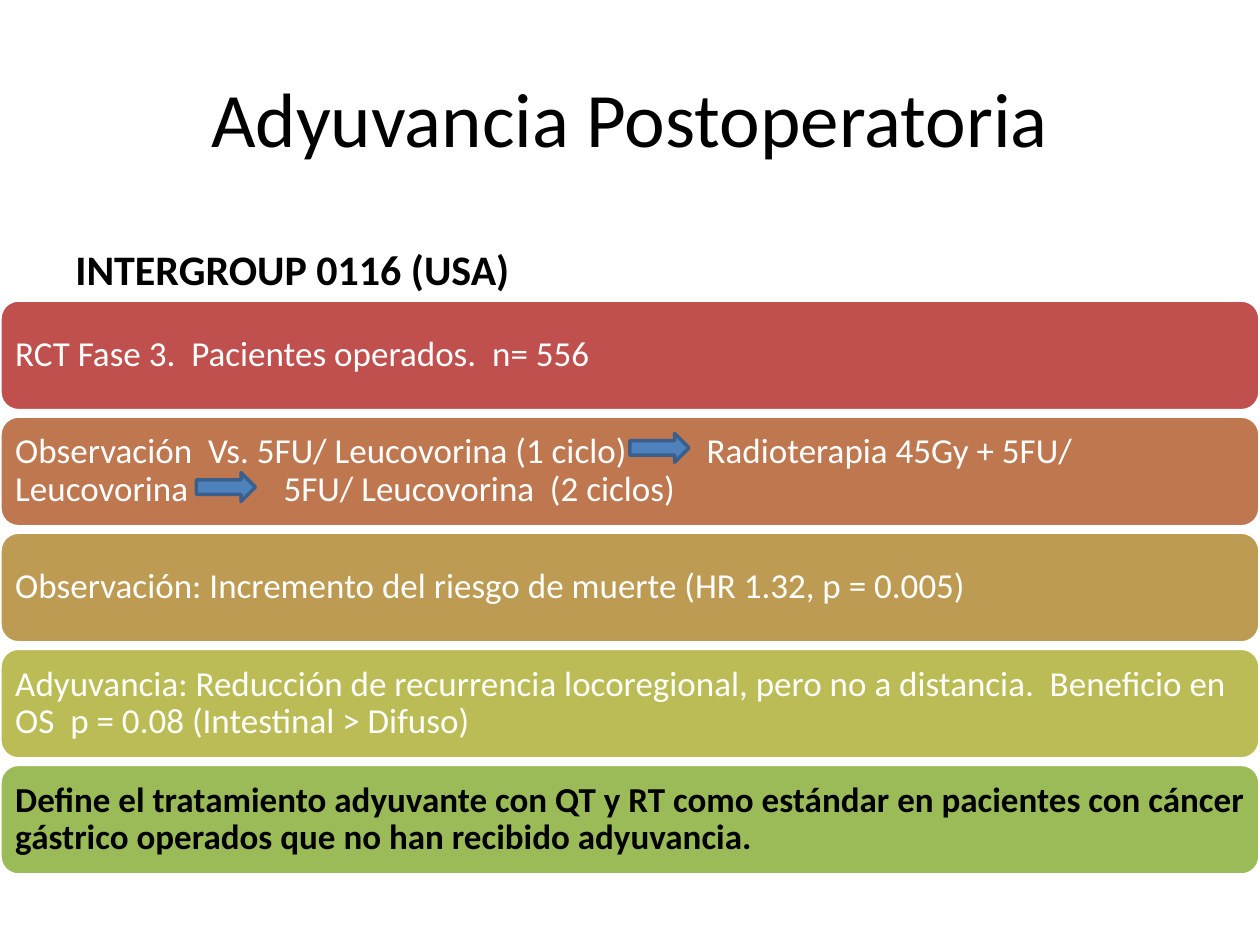
import dataclasses

import lxml.etree
import pptx
import pptx.dml.color
import pptx.enum.shapes
import pptx.enum.text
import pptx.oxml.ns
import pptx.util

Cm = pptx.util.Cm
Pt = pptx.util.Pt
Anchor = pptx.enum.text.MSO_ANCHOR
Align = pptx.enum.text.PP_ALIGN
ShapeType = pptx.enum.shapes.MSO_SHAPE


@dataclasses.dataclass(frozen=True)
class Theme:
    font: str = "Calibri"
    dark: str = "000000"
    light: str = "FFFFFF"
    arrow_fill: str = "4F81BD"
    arrow_line: str = "3A5F8C"
    bands: tuple = ("C0504D", "BF7750", "BD9B53", "BCBC56", "9BBB59")
    title_size: int = 44
    heading_size: int = 24
    band_size: int = 20
    line_width: int = 2


class SlideBuilder:
    def __init__(self, slide, theme):
        self.slide = slide
        self.theme = theme

    def fill_text(self, shape, text, size, color, bold=False, align=Align.LEFT, anchor=Anchor.MIDDLE):
        frame = shape.text_frame
        frame.word_wrap = True
        frame.vertical_anchor = anchor
        paragraph = frame.paragraphs[0]
        paragraph.alignment = align
        run = paragraph.add_run()
        run.text = text
        run.font.name = self.theme.font
        run.font.size = Pt(size)
        run.font.bold = bold
        run.font.color.rgb = pptx.dml.color.RGBColor.from_string(color)
        return paragraph

    def text(self, box, text, size, **style):
        shape = self.slide.shapes.add_textbox(*map(Cm, box))
        self.fill_text(shape, text, size, self.theme.dark, **style)

    def shape(self, kind, box, fill, line):
        shape = self.slide.shapes.add_shape(kind, *map(Cm, box))
        shape.shadow.inherit = False
        shape.fill.solid()
        shape.fill.fore_color.rgb = pptx.dml.color.RGBColor.from_string(fill)
        shape.line.color.rgb = pptx.dml.color.RGBColor.from_string(line)
        shape.line.width = Pt(self.theme.line_width)
        return shape

    def band(self, box, fill, text, color, bold=False, tabs=()):
        shape = self.shape(ShapeType.ROUNDED_RECTANGLE, box, fill, self.theme.light)
        frame = shape.text_frame
        frame.margin_left = frame.margin_right = Cm(0.2)
        frame.margin_top = frame.margin_bottom = Cm(0.2)
        paragraph = self.fill_text(shape, text, self.theme.band_size, color, bold)
        paragraph.line_spacing = 0.9
        if tabs:
            self.tab_stops(paragraph, tabs)

    def tab_stops(self, paragraph, positions):
        name = pptx.oxml.ns.qn
        properties = paragraph._p.get_or_add_pPr()
        stops = lxml.etree.SubElement(properties, name("a:tabLst"))
        for position in positions:
            lxml.etree.SubElement(stops, name("a:tab"), pos=str(Cm(position)), algn="l")

    def arrow(self, left, top):
        self.shape(ShapeType.RIGHT_ARROW, (left, top, 1.19, 0.58),
                   self.theme.arrow_fill, self.theme.arrow_line)


def main():
    presentation = pptx.Presentation()
    presentation.slide_width = Cm(25.4)
    presentation.slide_height = Cm(19.05)
    theme = Theme()
    builder = SlideBuilder(presentation.slides.add_slide(presentation.slide_layouts[6]), theme)

    builder.text((1.27, 0.76, 22.86, 3.18), "Adyuvancia Postoperatoria",
                 theme.title_size, align=Align.CENTER)
    builder.text((1.27, 4.27, 11.23, 1.78), "INTERGROUP 0116 (USA)",
                 theme.heading_size, bold=True, anchor=Anchor.BOTTOM)

    findings = (
        ("RCT Fase 3.  Pacientes operados.  n= 556", {}),
        ("Observación  Vs. 5FU/ Leucovorina (1 ciclo)\tRadioterapia 45Gy + 5FU/ "
         "Leucovorina\t5FU/ Leucovorina  (2 ciclos)", {"tabs": (5.41, 13.94)}),
        ("Observación: Incremento del riesgo de muerte (HR 1.32, p = 0.005)", {}),
        ("Adyuvancia: Reducción de recurrencia locoregional, pero no a distancia.  "
         "Beneficio en OS  p = 0.08 (Intestinal > Difuso)", {}),
        ("Define el tratamiento adyuvante con QT y RT como estándar en pacientes con "
         "cáncer gástrico operados que no han recibido adyuvancia.",
         {"color": theme.dark, "bold": True}),
    )
    first_top, pitch, height = 6.05, 2.34, 2.23
    for index, (fill, (text, style)) in enumerate(zip(theme.bands, findings)):
        box = (0, first_top + index * pitch, 25.4, height)
        builder.band(box, fill, text, **{"color": theme.light, **style})

    for left, top in ((12.7, 8.74), (3.96, 9.53)):
        builder.arrow(left, top)

    presentation.save("out.pptx")


if __name__ == "__main__":
    main()
